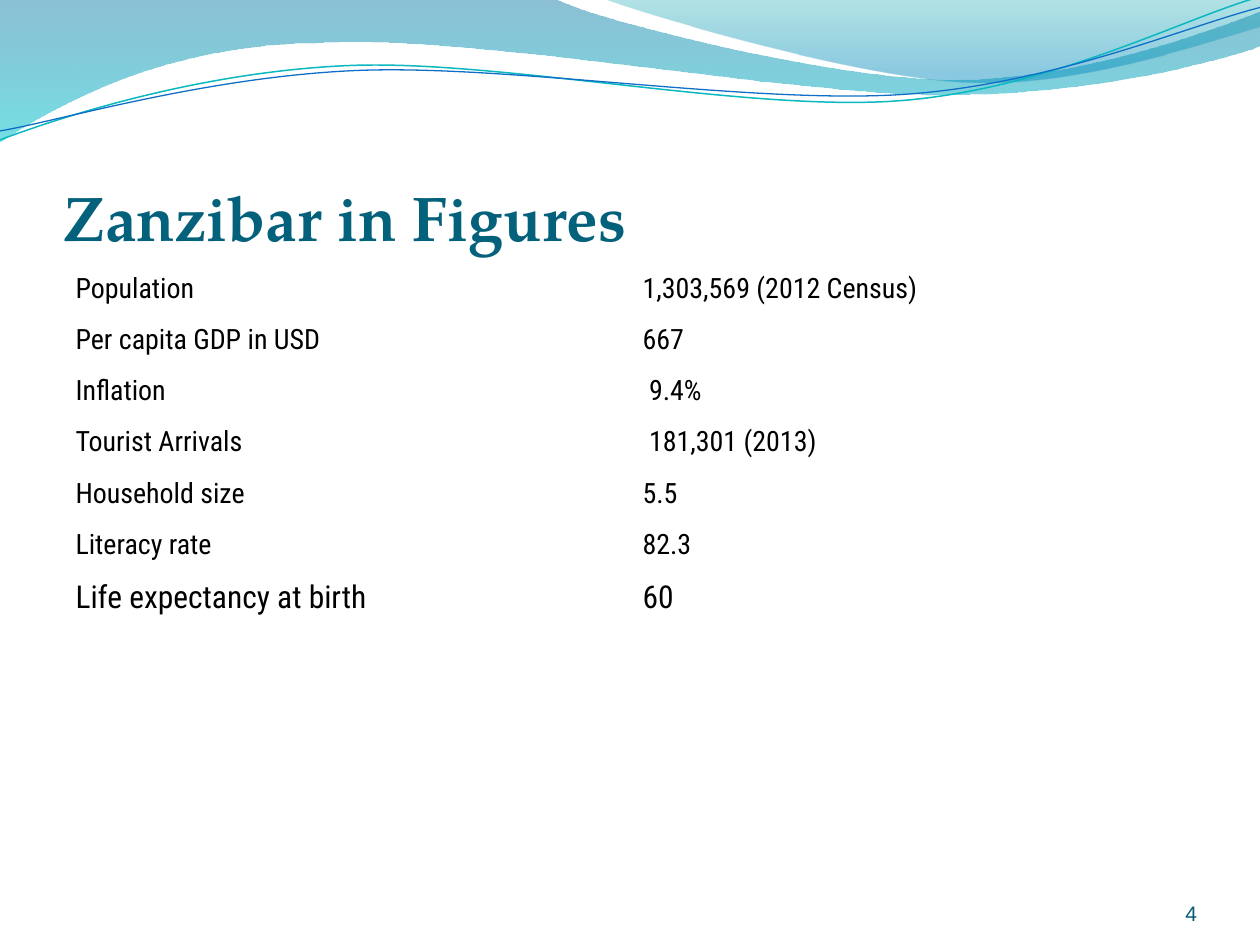
import math
import pptx
import pptx.util
import pptx.oxml
import pptx.dml.color
import pptx.enum.text
from lxml import etree

Inches = pptx.util.Inches
Pt = pptx.util.Pt
Anchor = pptx.enum.text.MSO_ANCHOR
Align = pptx.enum.text.PP_ALIGN
tag = pptx.oxml.ns.qn

HUES = {
    "title": "04617B", "text": "000000", "number": "045D75",
    "teal": "0AB8BF", "blue": "0F6FC6",
    "deep": "0074A1", "aqua": "00C6CF", "green": "00A1A9", "sky": "008BBF",
}
FACTS = [
    ("Population", "1,303,569 (2012 Census)"),
    ("Per capita GDP in USD", "667"),
    ("Inflation", " 9.4%"),
    ("Tourist Arrivals", " 181,301 (2013)"),
    ("Household size", "5.5"),
    ("Literacy rate", "82.3"),
    ("Life expectancy at birth", "60"),
]
BAND = [
    (0, -0.01), (4.4, -0.01),
    (4.76, 0.17, 6.64, 0.63, 7.58, 0.63), (8.53, 0.63, 9.58, 0.26, 10, 0.09),
    (10.01, 0.36),
    (9.83, 0.44, 8.7, 0.76, 7.46, 0.75), (6.22, 0.75, 3.82, 0.28, 2.57, 0.34),
    (1.29, 0.35, 0.46, 0.83, -0.01, 1.13),
]
CREST = [
    (4.79, -0.01),
    (5.09, 0.11, 6.82, 0.62, 7.69, 0.65), (8.56, 0.69, 9.61, 0.32, 10, 0.21),
    (10, 0),
]
UPPER = [
    (0, 1.11),
    (0.48, 0.93, 1.58, 0.57, 2.77, 0.52), (3.95, 0.47, 5.93, 0.89, 7.13, 0.8),
    (8.33, 0.71, 9.38, 0.15, 9.98, -0.02),
]
LOWER = [
    (0, 1.04),
    (0.47, 0.96, 1.64, 0.61, 2.83, 0.56), (4.03, 0.51, 5.97, 0.83, 7.17, 0.75),
    (8.36, 0.67, 9.41, 0.21, 10, 0.06),
]
TILT = -2.7


def color(name):
    """Return the named hue as an RGB colour."""
    return pptx.dml.color.RGBColor.from_string(HUES[name])


def style(para, face, size, hue, bold=False):
    """Set the font of a whole paragraph."""
    font = para.font
    font.name, font.size, font.bold = face, Pt(size), bold
    font.color.rgb = color(hue)


def turn(point, hub, angle):
    """Rotate a point about a hub by degrees."""
    x, y = point[0] - hub[0], point[1] - hub[1]
    cos, sin = math.cos(math.radians(angle)), math.sin(math.radians(angle))
    return hub[0] + x * cos - y * sin, hub[1] + x * sin + y * cos


def outline(slide, box, parts, close, tilt=0, hub=(0, 0)):
    """Build a freeform whose six-number parts are cubic curves."""
    pairs = [part[i:i + 2] for part in parts for i in range(0, len(part), 2)]
    points = [turn(pair, hub, -tilt) for pair in pairs]
    spots = [(box[0] + Inches(x), box[1] + Inches(y)) for x, y in points]
    pen = slide.shapes.build_freeform(*spots[0])
    pen.add_line_segments(spots[1:], close=close)
    shape = pen.convert_to_shape()
    shape.shadow.inherit = False
    shape.rotation = tilt
    lines = list(shape._element.iter(tag("a:lnTo")))
    for part in parts[1:]:
        count = len(part) // 2
        group, lines = lines[:count], lines[count:]
        if count == 3:
            curve = etree.Element(tag("a:cubicBezTo"))
            group[0].addprevious(curve)
            for line in group:
                curve.append(line[0])
                line.getparent().remove(line)
    return shape


def blend(shape, stops):
    """Fill a shape from top to bottom with see-through stops."""
    shape.line.fill.background()
    shape.fill.gradient()
    grad = shape.fill._xPr.find(tag("a:gradFill"))
    for child in list(grad):
        grad.remove(child)
    row = etree.SubElement(grad, tag("a:gsLst"))
    for place, hue, alpha in stops:
        stop = etree.SubElement(row, tag("a:gs"), pos=str(place * 1000))
        tint = etree.SubElement(stop, tag("a:srgbClr"), val=HUES[hue])
        etree.SubElement(tint, tag("a:alpha"), val=str(alpha * 1000))
    etree.SubElement(grad, tag("a:lin"), ang="5400000", scaled="0")


def add_waves(slide, box):
    """Draw the two wave bands and the two tilted thin lines."""
    for parts, stops in (
        (BAND, [(0, "deep", 45), (100, "aqua", 55)]),
        (CREST, [(0, "green", 30), (80, "sky", 45)]),
    ):
        blend(outline(slide, box, parts, True), stops)
    for parts, hue, width, hub in (
        (UPPER, "teal", 0.85, (4.99, 0.58)),
        (LOWER, "blue", 0.75, (5, 0.59)),
    ):
        curve = outline(slide, box, parts, False, TILT, hub)
        curve.fill.background()
        curve.line.color.rgb = color(hue)
        curve.line.width = Pt(width)


def add_title(slide, box):
    """Place the title, in front of the waves, at the bottom of its box."""
    title = slide.shapes.title
    slide.shapes._spTree.append(title._element)
    title.left, title.top, title.width, title.height = box
    frame = title.text_frame
    frame.text = "Zanzibar in Figures"
    frame.vertical_anchor = Anchor.BOTTOM
    frame.margin_left = frame.margin_right = frame.margin_bottom = 0
    frame.paragraphs[0].alignment = Align.LEFT
    style(frame.paragraphs[0], "TeX Gyre Pagella", 36, "title", True)


def add_facts(slide, box):
    """Place the table of facts, with a larger last row."""
    table = slide.shapes.add_table(len(FACTS), 2, *box).table
    table.first_row = table.horz_banding = False
    for r, fact in enumerate(FACTS):
        size = 18 if r == len(FACTS) - 1 else 16
        for c, words in enumerate(fact):
            cell = table.cell(r, c)
            cell.fill.background()
            cell.text = words
            style(cell.text_frame.paragraphs[0], "Roboto Condensed", size, "text")


def add_number(slide, box):
    """Place the page number at the right of its box."""
    frame = slide.shapes.add_textbox(*box).text_frame
    frame.word_wrap = True
    frame.vertical_anchor = Anchor.BOTTOM
    frame.margin_left = frame.margin_right = 0
    frame.margin_top = frame.margin_bottom = 0
    frame.text = "4"
    frame.paragraphs[0].alignment = Align.RIGHT
    style(frame.paragraphs[0], "Arial", 12, "number")


def main():
    """Build the slide and save it."""
    deck = pptx.Presentation()
    deck.slide_width, deck.slide_height = Inches(10), Inches(7.5)
    wide, high = deck.slide_width, deck.slide_height
    slide = deck.slides.add_slide(deck.slide_layouts[5])

    def area(x, y, w, h):
        """Turn percentages of the slide into a box."""
        return [int(n * side / 100) for n, side in
                ((x, wide), (y, high), (w, wide), (h, high))]

    add_waves(slide, area(0, 0, 100, 15))
    add_title(slide, area(5, 10.27, 90, 16.67))
    add_facts(slide, area(5, 28.2, 90, 37.87))
    add_number(slide, area(86.67, 92.67, 8.33, 5.33))
    deck.save("out.pptx")


if __name__ == "__main__":
    main()
